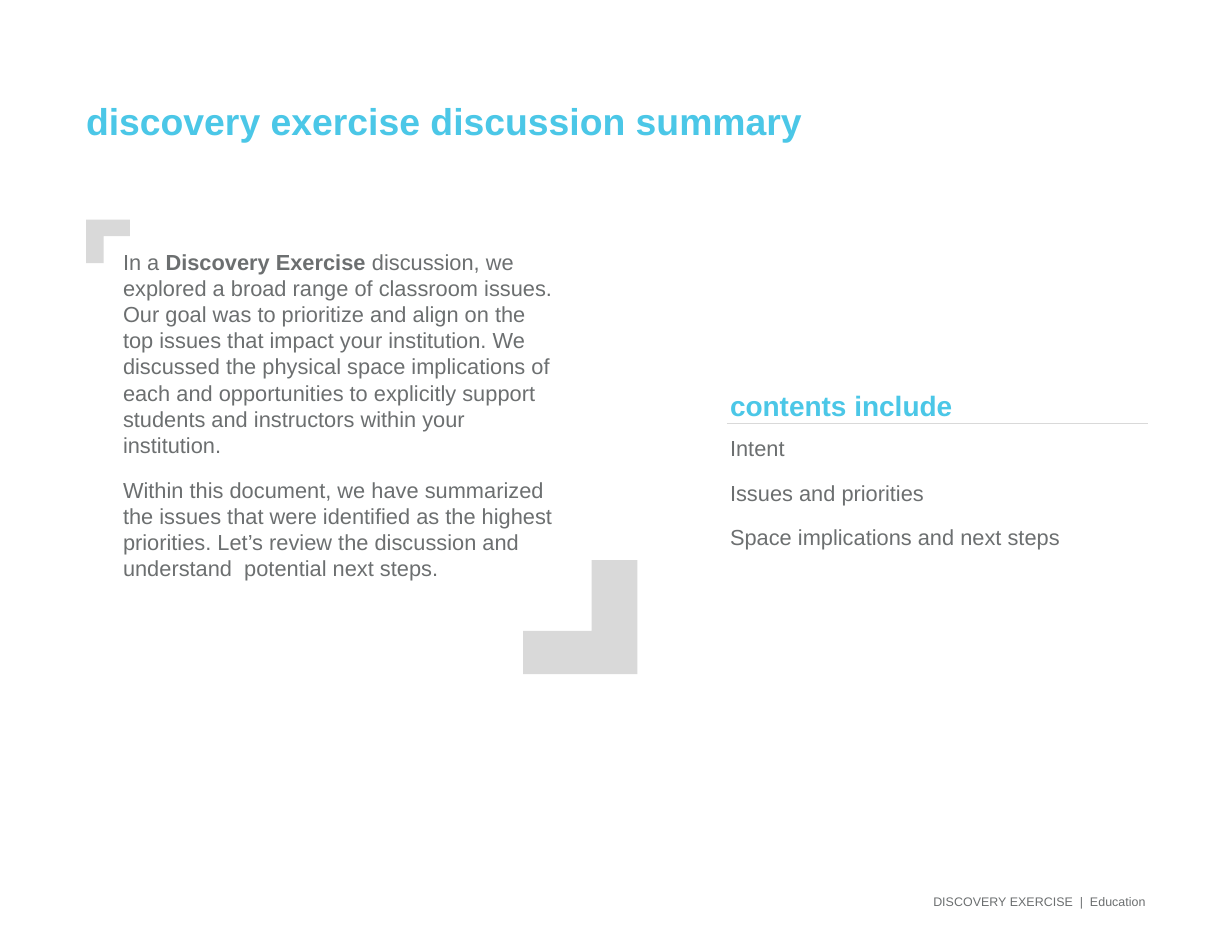
from dataclasses import dataclass

import pptx
import pptx.dml.color
import pptx.enum.shapes
import pptx.enum.text
import pptx.oxml
import pptx.oxml.ns
import pptx.util
from pptx.util import Inches

ALIGN = pptx.enum.text.PP_ALIGN
ANCHOR = pptx.enum.text.MSO_ANCHOR


@dataclass(frozen=True)
class Theme:
    font: str = "Arial"
    accent: str = "4BC7E7"
    ink: str = "6C6F70"
    rule: str = "D9D9D9"
    title: float = 24
    heading: float = 18
    body: float = 14
    footer: float = 8
    leading: float = 16.8
    gap: float = 12


THEME = Theme()


def rgb(value):
    return pptx.dml.color.RGBColor.from_string(value)


def add_text(page, box, paragraphs, size=THEME.body, color=THEME.ink, bold=False,
             align=ALIGN.LEFT, anchor=ANCHOR.TOP, leading=None, after=0):
    """Each paragraph is a string, or a list of (text, bold) spans."""
    frame = page.shapes.add_textbox(*box).text_frame
    frame.word_wrap = True
    frame.vertical_anchor = anchor
    for index, content in enumerate(paragraphs):
        para = frame.paragraphs[0] if index == 0 else frame.add_paragraph()
        para.alignment = align
        para.space_after = pptx.util.Pt(after)
        if leading:
            para.line_spacing = pptx.util.Pt(leading)
        spans = [(content, bold)] if isinstance(content, str) else content
        for text, is_bold in spans:
            span = para.add_run()
            span.text = text
            span.font.name = THEME.font
            span.font.size = pptx.util.Pt(size)
            span.font.bold = is_bold
            span.font.color.rgb = rgb(color)


def add_bracket(page, left, top, size, rotation):
    bracket = page.shapes.add_shape(
        pptx.enum.shapes.MSO_SHAPE.CORNER, left, top, size, size)
    bracket.adjustments[0] = 0.4
    bracket.adjustments[1] = 0.38
    bracket.rotation = rotation
    bracket.shadow.inherit = False
    bracket.fill.solid()
    bracket.fill.fore_color.rgb = rgb(THEME.rule)
    bracket.line.fill.background()


def add_rule(page, left, right, y):
    rule = page.shapes.add_connector(
        pptx.enum.shapes.MSO_CONNECTOR.STRAIGHT, left, y, right, y)
    rule.line.color.rgb = rgb(THEME.rule)
    rule.line.width = pptx.util.Pt(0.75)
    rule._element.spPr.append(pptx.oxml.parse_xml(
        "<a:effectLst %s/>" % pptx.oxml.ns.nsdecls("a")))


def add_summary(page, left, top, width, height):
    """Body text framed by a small and a large corner bracket."""
    small, large = Inches(0.39), Inches(1.02)
    add_bracket(page, left, top, small, 90)
    add_bracket(page, left + width - large, top + height - large, large, 270)
    text_box = (left + Inches(0.23), top + Inches(0.21), Inches(4.08), Inches(3.8))
    add_text(page, text_box, [
        [("In a ", False), ("Discovery Exercise ", True),
         ("discussion, we explored a broad range of classroom issues. Our goal was to "
          "prioritize and align on the top issues that impact your institution. We "
          "discussed the physical space implications of each and opportunities to "
          "explicitly support students and instructors within your institution.", False)],
        "Within this document, we have summarized the issues that were identified as "
        "the highest priorities. Let’s review the discussion and understand  potential "
        "next steps.",
    ], leading=THEME.leading, after=THEME.gap)


def add_contents(page, left, top, width, height):
    heading_height, list_offset = Inches(0.33), Inches(0.41)
    add_text(page, (left, top, width, heading_height), ["contents include"],
             size=THEME.heading, color=THEME.accent, bold=True)
    add_text(page, (left, top + list_offset, width, height - list_offset),
             ["Intent", "Issues and priorities", "Space implications and next steps"],
             leading=THEME.leading, after=THEME.gap)
    add_rule(page, left + Inches(0.07), left + width, top + Inches(0.36))


def main():
    deck = pptx.Presentation()
    deck.slide_width, deck.slide_height = Inches(11), Inches(8.5)
    page = deck.slides.add_slide(deck.slide_layouts[6])

    add_text(page, (Inches(0.67), Inches(0.93), Inches(9.5), Inches(0.4)),
             ["discovery exercise discussion summary"], size=THEME.title,
             color=THEME.accent, bold=True, anchor=ANCHOR.BOTTOM)
    add_summary(page, Inches(0.77), Inches(1.96), Inches(4.92), Inches(4.06))
    add_contents(page, Inches(6.42), Inches(3.42), Inches(3.83), Inches(4.5))
    add_text(page, (Inches(7.25), Inches(7.93), Inches(3.08), Inches(0.24)),
             ["DISCOVERY EXERCISE  |  Education"], size=THEME.footer,
             align=ALIGN.RIGHT, anchor=ANCHOR.MIDDLE)

    deck.save("out.pptx")


if __name__ == "__main__":
    main()
